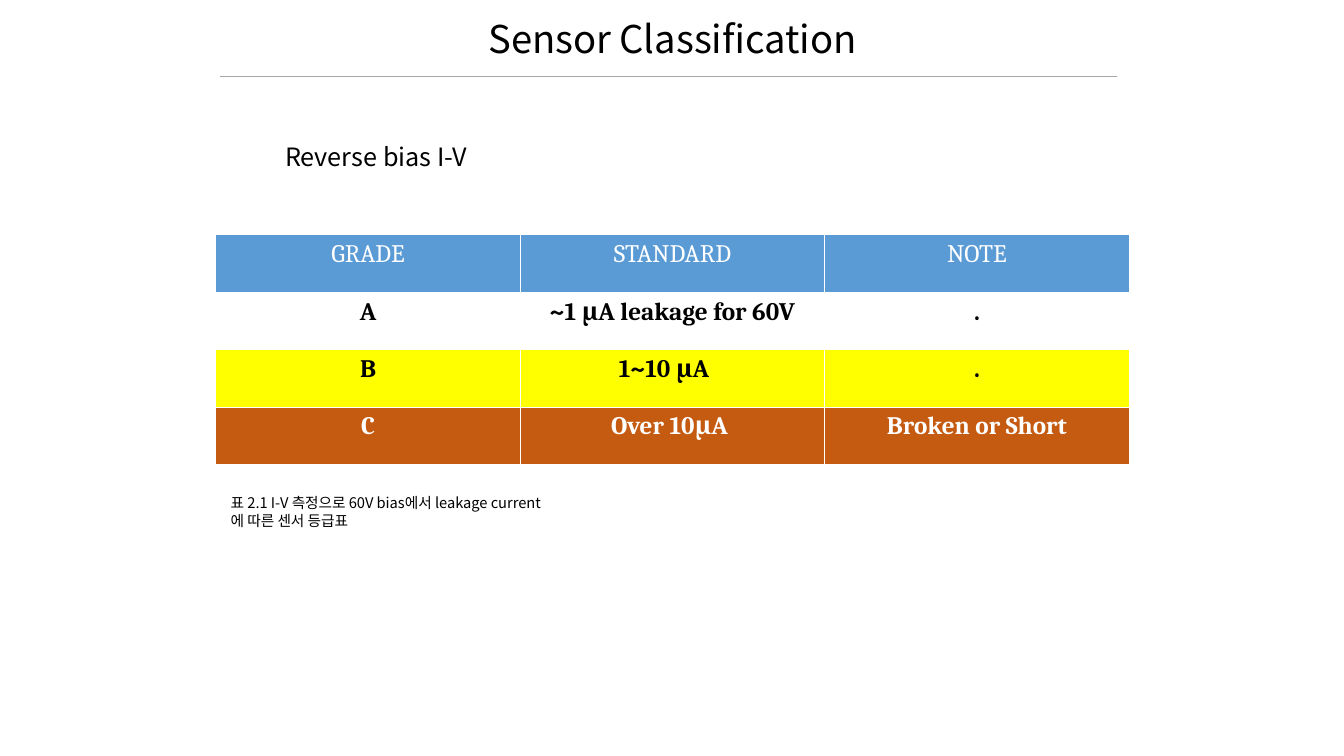
"""Build the sensor classification slide with its grade table."""
from lxml.etree import SubElement
from pptx import Presentation
from pptx.dml.color import RGBColor
from pptx.enum.shapes import MSO_CONNECTOR
from pptx.enum.text import MSO_ANCHOR, MSO_AUTO_SIZE, PP_ALIGN
from pptx.oxml.ns import qn
from pptx.util import Inches, Pt

COLORS = {
    "black": "000000",
    "white": "FFFFFF",
    "header": "5B9BD5",
    "fair": "FFFF00",
    "poor": "C55A11",
    "rule": "A6A6A6",
}
SANS = "Noto Sans CJK KR"
SERIF = "Cambria"


def rgb(key):
    return RGBColor.from_string(COLORS[key])


def write(frame, lines, align, color, **font_format):
    frame.word_wrap = True
    frame.text = "\n".join(lines)
    for paragraph in frame.paragraphs:
        paragraph.alignment = align
        for run in paragraph.runs:
            for attribute, value in font_format.items():
                setattr(run.font, attribute, value)
            run.font.color.rgb = rgb(color)
            east_asian = SubElement(run.font._element, qn("a:ea"))
            east_asian.set("typeface", font_format["name"])


prs = Presentation()
prs.slide_width, prs.slide_height = Inches(13.33), Inches(7.5)
slide = prs.slides.add_slide(prs.slide_layouts[5])

title = slide.shapes.title
title_place = {"left": 1.67, "top": 0, "width": 10, "height": 0.76}
for side, length in title_place.items():
    setattr(title, side, Inches(length))
write(title.text_frame, ["Sensor Classification"], PP_ALIGN.CENTER, "black",
      name=SANS, size=Pt(27.3))
title.text_frame.vertical_anchor = MSO_ANCHOR.MIDDLE
title.text_frame.auto_size = MSO_AUTO_SIZE.NONE

grades = [
    ("header", "white", False, ["GRADE", "STANDARD", "NOTE"]),
    ("white", "black", True, ["A", "~1 μA leakage for 60V", "."]),
    ("fair", "black", True, ["B", "1~10 μA", "."]),
    ("poor", "white", True, ["C", "Over 10μA", "Broken or Short"]),
]
grade_table = slide.shapes.add_table(
    len(grades), 3, Inches(2.14), Inches(2.33), Inches(9.06), Inches(2.28)).table
for row, (fill, ink, bold, entries) in enumerate(grades):
    for column, entry in enumerate(entries):
        cell = grade_table.cell(row, column)
        cell.fill.solid()
        cell.fill.fore_color.rgb = rgb(fill)
        write(cell.text_frame, [entry], PP_ALIGN.CENTER, ink,
              name=SERIF, size=Pt(18), bold=bold)
grade_table.cell(2, 1).margin_right = Inches(0.27)
grade_table.cell(3, 1).margin_right = Inches(0.16)

notes = [
    ((2.73, 1.35, 3.54, 0.4), 18, ["Reverse bias I-V"]),
    ((2.19, 4.85, 3.69, 0.45), 10.5,
     ["표 2.1 I-V 측정으로 60V bias에서 leakage current", "에 따른 센서 등급표"]),
]
for place, size, lines in notes:
    note = slide.shapes.add_textbox(*map(Inches, place))
    write(note.text_frame, lines, PP_ALIGN.LEFT, "black", name=SANS, size=Pt(size))
    note.text_frame.auto_size = MSO_AUTO_SIZE.SHAPE_TO_FIT_TEXT

title_rule = slide.shapes.add_connector(
    MSO_CONNECTOR.STRAIGHT, Inches(2.18), Inches(0.76), Inches(11.08), Inches(0.76))
title_rule.line.color.rgb = rgb("rule")
title_rule.line.width = Pt(1.25)
SubElement(title_rule._element.spPr, qn("a:effectLst"))

prs.save("out.pptx")
